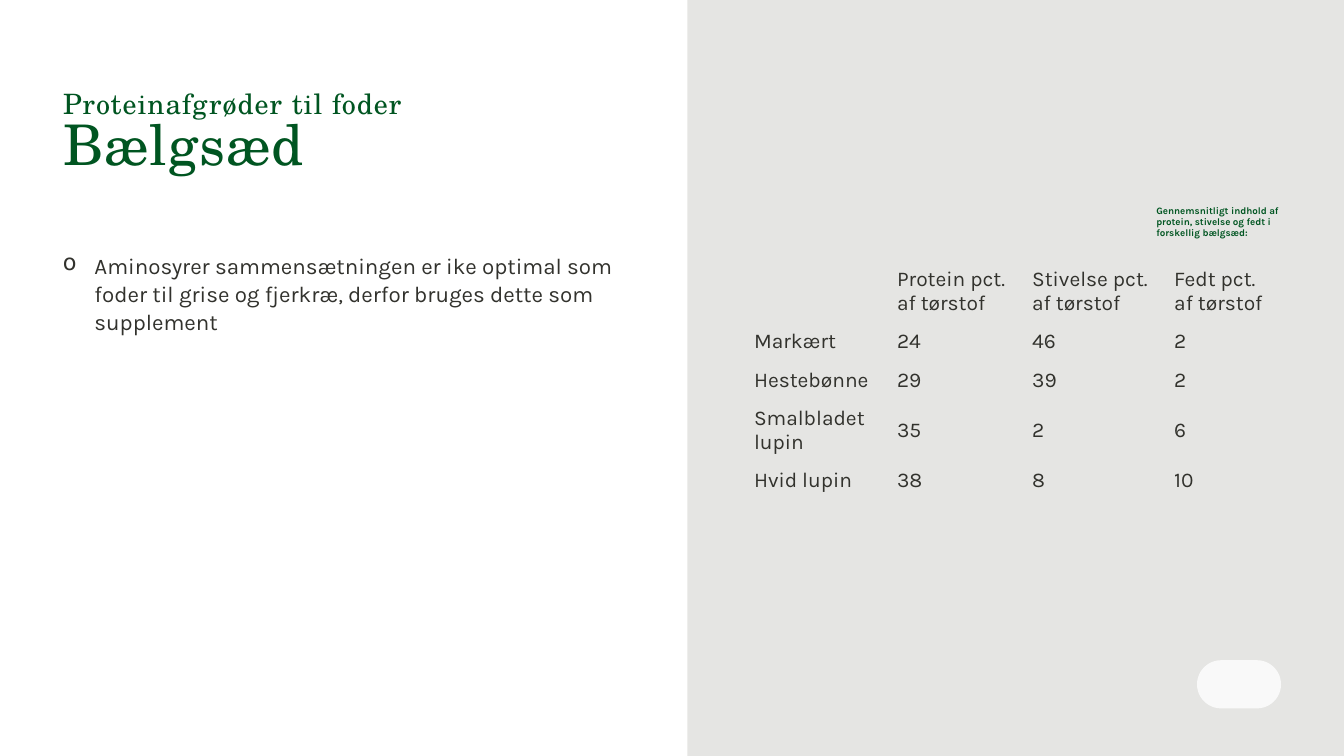
from pptx import Presentation
from pptx.dml.color import RGBColor
from pptx.enum.shapes import MSO_SHAPE
from pptx.enum.text import MSO_ANCHOR, MSO_AUTO_SIZE, PP_ALIGN
from pptx.oxml.ns import qn
from pptx.util import Pt
from lxml.etree import SubElement

HUES = {
    "back": "E5E5E3",
    "panel": "FFFFFF",
    "mark": "F9F9F9",
    "green": "005521",
    "ink": "32322D",
}
SERIF = "TeX Gyre Schola"
SANS = "Karla"
PLAIN = "{2D5ABB26-0587-4C30-8999-92F81FD0307C}"
ROWS = [
    ("", "Protein pct. af tørstof", "Stivelse pct. af tørstof", "Fedt pct. af tørstof"),
    ("Markært", "24", "46", "2"),
    ("Hestebønne", "29", "39", "2"),
    ("Smalbladet lupin", "35", "2", "6"),
    ("Hvid lupin", "38", "8", "10"),
]
WIDTHS = (102.2, 96.5, 101.5, 81)
HEIGHTS = (44.6, 27.4, 27.4, 44.6, 27.4)


def tint(name):
    return RGBColor.from_string(HUES[name])


def add_run(para, text, size, face, hue, bold=False):
    run = para.add_run()
    run.text = text
    font = run.font
    font.size = Pt(size)
    font.name = face
    font.bold = bold
    font.color.rgb = tint(hue)
    return run


def set_frame(frame):
    frame.word_wrap = True
    frame.auto_size = MSO_AUTO_SIZE.NONE
    frame.vertical_anchor = MSO_ANCHOR.TOP
    frame.margin_left = frame.margin_right = 0
    frame.margin_top = frame.margin_bottom = 0
    para = frame.paragraphs[0]
    para.alignment = PP_ALIGN.LEFT
    return para


def add_block(slide, kind, box, hue):
    block = slide.shapes.add_shape(kind, *map(Pt, box))
    block.shadow.inherit = False
    block.fill.solid()
    block.fill.fore_color.rgb = tint(hue)
    block.line.fill.background()
    return block


def add_text(slide, box):
    return set_frame(slide.shapes.add_textbox(*map(Pt, box)).text_frame)


def add_title(slide, box, small, large):
    title = slide.shapes.title
    title.left, title.top, title.width, title.height = map(Pt, box)
    para = set_frame(title.text_frame)
    para.line_spacing = 0.85
    first = add_run(para, small, 20, SERIF, "green")
    para.add_line_break()
    second = add_run(para, large, 40, SERIF, "green")
    for run in (first, second):
        run.font._element.set("spc", "70")


def add_bullet(slide, box, text):
    para = add_text(slide, box)
    para.line_spacing = Pt(20)
    para.space_after = Pt(20)
    props = para._p.get_or_add_pPr()
    props.set("marL", str(Pt(22.5)))
    props.set("indent", str(Pt(-22.5)))
    SubElement(props, qn("a:buChar")).set("char", "o")
    add_run(para, text, 16, SANS, "ink")


def add_note(slide, box, text):
    para = add_text(slide, box)
    para.line_spacing = 0.95
    para.space_after = Pt(6)
    add_run(para, text, 7, SANS, "green", True)


def add_grid(slide, left, top):
    size = map(Pt, (left, top, sum(WIDTHS), sum(HEIGHTS)))
    table = slide.shapes.add_table(len(ROWS), len(WIDTHS), *size).table
    table.first_row = table.horz_banding = False
    table._tbl.tblPr.find(qn("a:tableStyleId")).text = PLAIN
    for col, width in zip(table.columns, WIDTHS):
        col.width = Pt(width)
    for row, height, texts in zip(table.rows, HEIGHTS, ROWS):
        row.height = Pt(height)
        for cell, text in zip(row.cells, texts):
            cell.fill.background()
            cell.vertical_anchor = MSO_ANCHOR.MIDDLE
            cell.margin_left = cell.margin_right = Pt(5.2)
            cell.margin_top = cell.margin_bottom = Pt(2.6)
            if text:
                add_run(cell.text_frame.paragraphs[0], text, 15, SANS, "ink")


def main():
    deck = Presentation()
    deck.slide_width, deck.slide_height = Pt(960), Pt(540)
    slide = deck.slides.add_slide(deck.slide_layouts[5])
    fill = slide.background.fill
    fill.solid()
    fill.fore_color.rgb = tint("back")
    panel = add_block(slide, MSO_SHAPE.RECTANGLE, (0, 0, 491, 540), "panel")
    slide.shapes.title._element.addprevious(panel._element)
    mark = add_block(slide, MSO_SHAPE.ROUNDED_RECTANGLE, (855, 471.6, 60, 34.4), "mark")
    mark.adjustments[0] = 0.5
    add_title(slide, (45, 65.5, 424, 82), "Proteinafgrøder til foder", "Bælgsæd")
    add_note(
        slide, (826, 147, 89, 41),
        "Gennemsnitligt indhold af protein, stivelse og fedt i forskellig bælgsæd:",
    )
    add_bullet(
        slide, (45, 179, 424, 276),
        "Aminosyrer sammensætningen er ike optimal som foder til grise og fjerkræ, "
        "derfor bruges dette som supplement",
    )
    add_grid(slide, 533.4, 185.8)
    deck.save("out.pptx")


if __name__ == "__main__":
    main()
